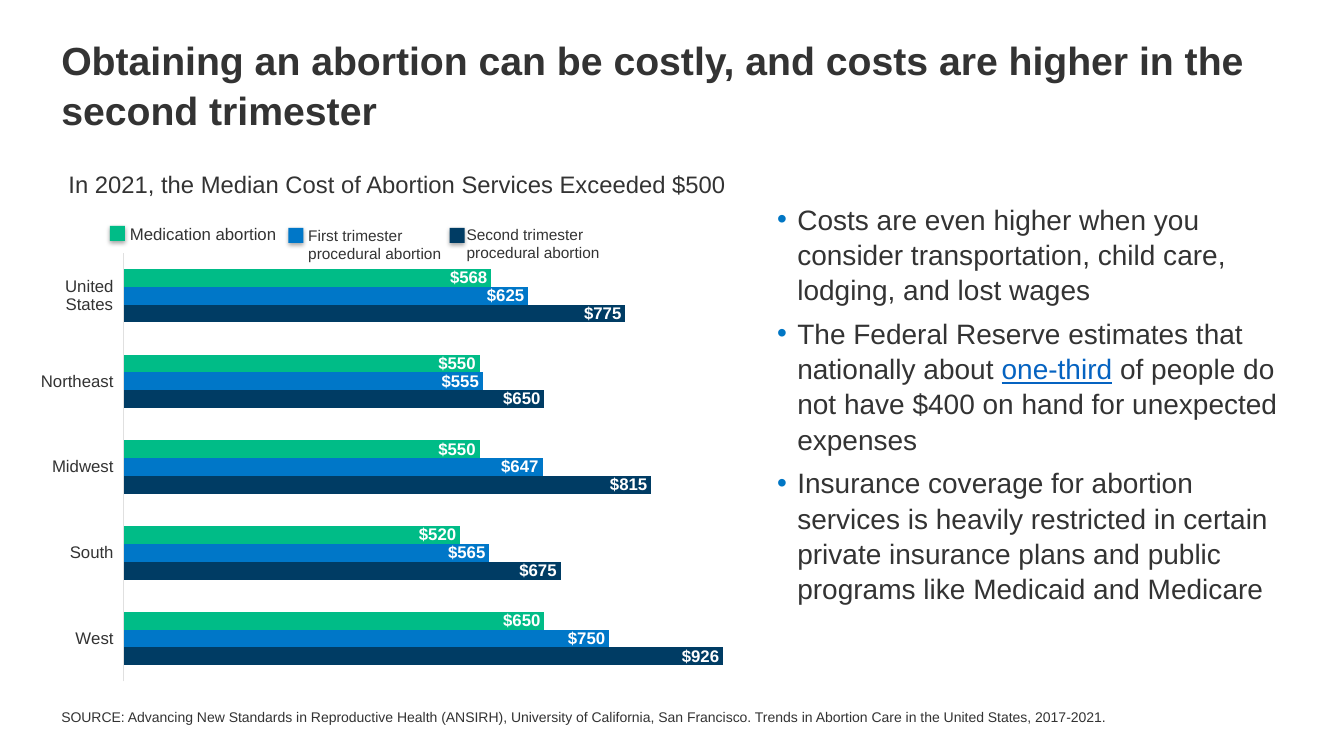
from lxml.etree import SubElement
from pptx import Presentation
from pptx.chart.data import CategoryChartData
from pptx.dml.color import RGBColor
from pptx.enum.chart import XL_CHART_TYPE, XL_LABEL_POSITION, XL_TICK_LABEL_POSITION, XL_TICK_MARK
from pptx.enum.shapes import MSO_SHAPE
from pptx.oxml import parse_xml
from pptx.oxml.ns import nsdecls, qn
from pptx.util import Pt

COLORS = {
    "text": "333333", "bullet": "0076C4", "link": "0563C1", "axis": "E0E0E0", "label": "FFFFFF",
    "medication": "00BC87", "first": "0077C8", "second": "003C64",
}
FONT = "Arial"
DOLLARS = '"$"#,##0'
REGIONS = ["West", "South", "Midwest", "Northeast", "United States"]
COSTS = [
    ("Second trimester procedural abortion", "second", [926, 675, 815, 650, 775]),
    ("First trimester procedural abortion", "first", [750, 565, 647, 555, 625]),
    ("Medication abortion", "medication", [650, 520, 550, 550, 568]),
]
LEGEND = [
    ("Medication abortion", "medication", 12, (78.5, 161.3), (85.7, 156.2, 134.6, 21.6)),
    ("First trimester procedural abortion", "first", 11, (206, 162.7), (213.1, 157.7, 134.6, 33.8)),
    ("Second trimester procedural abortion", "second", 11, (321.1, 162.7), (326.2, 157, 143.3, 33.8)),
]
POINTS = [
    [("Costs are even higher when you consider transportation, child care, lodging, and lost wages", "text")],
    [("The Federal Reserve estimates that nationally about ", "text"), ("one-third", "link"),
     (" of people do not have $400 on hand for unexpected expenses", "text")],
    [("Insurance coverage for abortion services is heavily restricted in certain private insurance "
      "plans and public programs like Medicaid and Medicare", "text")],
]


def color(name):
    """Return the named colour."""
    return RGBColor.from_string(COLORS[name])


def style(font, size, name="text", bold=False):
    """Set typeface, size, colour and weight of a font."""
    font.name, font.size, font.bold = FONT, Pt(size), bold
    font.color.rgb = color(name)


def add_box(page, place):
    """Add an empty wrapping text box and return its text frame."""
    frame = page.shapes.add_textbox(*map(Pt, place)).text_frame
    frame.word_wrap = True
    return frame


def add_text(page, place, text, size, bold=False, spacing=None):
    """Add a text box with one paragraph."""
    para = add_box(page, place).paragraphs[0]
    para.text = text
    para.line_spacing = spacing
    style(para.runs[0].font, size, bold=bold)


def add_bullets(page, place, points, size):
    """Add a bulleted list whose points are made of coloured spans."""
    frame = add_box(page, place)
    for number, spans in enumerate(points):
        para = frame.add_paragraph() if number else frame.paragraphs[0]
        para.line_spacing, para.space_after = 1.05, Pt(6)
        properties = para._p.get_or_add_pPr()
        properties.set("marL", str(Pt(27.4)))
        properties.set("indent", str(Pt(-14.4)))
        tint = SubElement(properties, qn("a:buClr"))
        SubElement(tint, qn("a:srgbClr"), val=COLORS["bullet"])
        SubElement(properties, qn("a:buFont"), typeface=FONT)
        SubElement(properties, qn("a:buChar"), char="•")
        for text, name in spans:
            span = para.add_run()
            span.text = text
            style(span.font, size, name)
            span.font.underline = name == "link"


def add_swatch(page, left, top, name):
    """Add a legend square with a soft shadow beneath it."""
    swatch = page.shapes.add_shape(MSO_SHAPE.RECTANGLE, Pt(left), Pt(top), Pt(10.8), Pt(10.8))
    swatch.fill.solid()
    swatch.fill.fore_color.rgb = color(name)
    swatch.line.fill.background()
    swatch.shadow.inherit = False
    effects = swatch._element.spPr.find(qn("a:effectLst"))
    effects.append(parse_xml(
        f'<a:outerShdw {nsdecls("a")} blurRad="{Pt(3.1)}" dist="{Pt(1.8)}" dir="5400000" rotWithShape="0">'
        '<a:srgbClr val="000000"><a:alpha val="35000"/></a:srgbClr></a:outerShdw>'))


def style_axes(chart):
    """Show only the line and names of the category axis."""
    regions, dollars = chart.category_axis, chart.value_axis
    regions.major_tick_mark = regions.minor_tick_mark = XL_TICK_MARK.NONE
    regions.tick_label_position = XL_TICK_LABEL_POSITION.LOW
    regions.format.line.color.rgb = color("axis")
    regions.format.line.width = Pt(0.75)
    style(regions.tick_labels.font, 12)
    dollars.minimum_scale, dollars.maximum_scale = 0, 950
    dollars.has_major_gridlines = False
    dollars.visible = False


def add_cost_chart(page, place):
    """Add the clustered bars of median cost by region."""
    data = CategoryChartData(number_format=DOLLARS)
    data.categories = REGIONS
    for title, _, costs in COSTS:
        data.add_series(title, costs)
    chart = page.shapes.add_chart(XL_CHART_TYPE.BAR_CLUSTERED, *map(Pt, place), data).chart
    chart.has_legend = chart.has_title = False
    style(chart.font, 10)
    style_axes(chart)
    plot = chart.plots[0]
    plot.gap_width, plot.overlap = 182, 0
    plot.vary_by_categories = False
    for series, (_, name, _) in zip(plot.series, COSTS):
        series.format.fill.solid()
        series.format.fill.fore_color.rgb = color(name)
        series.invert_if_negative = False
        labels = series.data_labels
        labels.show_value = True
        labels.number_format, labels.number_format_is_linked = DOLLARS, False
        labels.position = XL_LABEL_POSITION.INSIDE_END
        style(labels.font, 12, "label", bold=True)
    area = chart._chartSpace.chart.plotArea
    for old in area.findall(qn("c:layout")):
        area.remove(old)
    area.insert(0, parse_xml(
        f'<c:layout {nsdecls("c")}><c:manualLayout><c:layoutTarget val="inner"/>'
        '<c:xMode val="edge"/><c:yMode val="edge"/><c:x val="0.127"/><c:y val="0.02"/>'
        '<c:w val="0.855"/><c:h val="0.958"/></c:manualLayout></c:layout>'))


def main():
    """Build and save the slide."""
    deck = Presentation()
    deck.slide_width, deck.slide_height = Pt(960), Pt(540)
    page = deck.slides.add_slide(deck.slide_layouts[6])
    add_text(page, (36.7, 21, 887, 67.7),
             "Obtaining an abortion can be costly, and costs are higher in the second trimester",
             28, bold=True, spacing=1.05)
    add_bullets(page, (535, 139.7, 401.8, 316), POINTS, 20)
    add_cost_chart(page, (23, 174.2, 514, 319.7))
    add_text(page, (41.8, 117.4, 519.8, 28),
             "In 2021, the Median Cost of Abortion Services Exceeded $500", 17)
    add_text(page, (36.7, 502.6, 810.7, 28.8),
             "SOURCE: Advancing New Standards in Reproductive Health (ANSIRH), University of California, "
             "San Francisco. Trends in Abortion Care in the United States, 2017-2021.", 10)
    for text, name, size, corner, place in LEGEND:
        add_swatch(page, *corner, name)
        add_text(page, place, text, size)
    deck.save("out.pptx")


if __name__ == "__main__":
    main()
